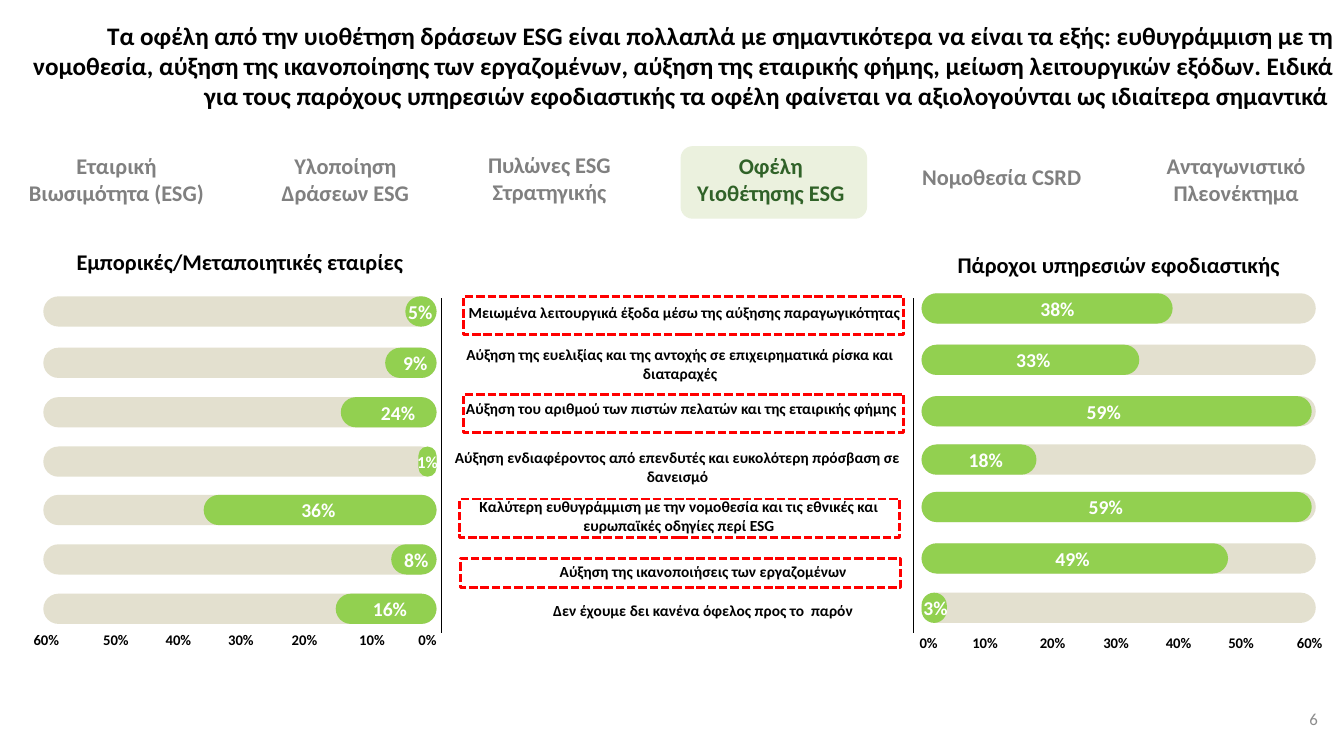
from pptx import Presentation
from pptx.dml.color import RGBColor
from pptx.enum.dml import MSO_LINE
from pptx.enum.shapes import MSO_CONNECTOR, MSO_SHAPE
from pptx.enum.text import MSO_ANCHOR, PP_ALIGN
from pptx.oxml.ns import qn
from pptx.util import Inches, Pt
from lxml.etree import SubElement

BLACK = RGBColor(0x00, 0x00, 0x00)
WHITE = RGBColor(0xFF, 0xFF, 0xFF)
GRAY = RGBColor(0x80, 0x80, 0x80)
NUMBER_GRAY = RGBColor(0x8C, 0x8C, 0x8C)
TRACK = RGBColor(0xDD, 0xD9, 0xC3)
GREEN = RGBColor(0x92, 0xD0, 0x50)
DARK_GREEN = RGBColor(0x30, 0x62, 0x28)
PALE_GREEN = RGBColor(0xEB, 0xF1, 0xDE)
RED = RGBColor(0xFF, 0x00, 0x00)

# Tabs: text, left, top, width, height of the text box
TABS = [
    ("Εταιρική Βιωσιμότητα (ESG)", 0.13, 0.01, 2.05, 0.64),
    ("Υλοποίηση Δράσεων ESG", 2.5, 0.01, 1.85, 0.64),
    ("Πυλώνες ESG Στρατηγικής", 4.3, 0, 2.3, 0.64),
    ("Οφέλη Υιοθέτησης ESG", 6.72, 0.01, 1.85, 0.64),
    ("Νομοθεσία CSRD", 9.01, 0.12, 1.85, 0.37),
    ("Ανταγωνιστικό Πλεονέκτημα", 11.19, 0.01, 2.14, 0.64),
]
ACTIVE_TAB = 3

# Bars: value, middle of the row, bar length, left of the label
COMPANIES = [
    (5, 0.68, 0.31, 3.52), (9, 1.19, 0.51, 3.47), (24, 1.68, 0.95, 3.25),
    (1, 2.17, 0.18, 3.61), (36, 2.65, 2.31, 2.46), (8, 3.14, 0.45, 3.48),
    (16, 3.63, 1.0, 3.17),
]
PROVIDERS = [
    (38, 0.62, 2.49, 1.08), (33, 1.13, 2.16, 0.84), (59, 1.64, 3.87, 1.54),
    (18, 2.12, 1.14, 0.37), (59, 2.59, 3.87, 1.56), (49, 3.1, 3.04, 1.23),
    (3, 3.59, 0.25, -0.08),
]
COMPANY_TICKS = [3.81, 3.26, 2.59, 1.96, 1.34, 0.72, 0.03]
PROVIDER_TICKS = [0.07, 0.63, 1.3, 1.93, 2.55, 3.17, 3.85]

# Benefits: text, left, top, width
BENEFITS = [
    ("Μειωμένα λειτουργικά έξοδα μέσω της αύξησης παραγωγικότητας",
     0.05, -0.08, 4.72),
    ("Αύξηση της ευελιξίας και της αντοχής σε επιχειρηματικά ρίσκα και διαταραχές",
     0.02, 0.43, 4.69),
    ("Αύξηση του αριθμού των πιστών πελατών και της εταιρικής φήμης",
     0.02, 0.87, 4.72),
    ("Αύξηση ενδιαφέροντος από επενδυτές και ευκολότερη πρόσβαση σε δανεισμό",
     0.02, 1.45, 4.64),
    ("Καλύτερη ευθυγράμμιση με την νομοθεσία και τις εθνικές και ευρωπαϊκές οδηγίες περί ESG",
     0.03, 1.94, 4.65),
    ("Αύξηση της ικανοποιήσεις των εργαζομένων", 0.25, 2.49, 4.69),
    ("Δεν έχουμε δει κανένα όφελος προς το  παρόν", 0.25, 2.88, 4.69),
]
# Frames: left, top, height
FRAMES = [(0.22, -0.02, 0.38), (0.22, 0.95, 0.38), (0.18, 1.99, 0.38), (0.19, 2.58, 0.29)]


def add_text(s, text, x, y, w, h, size=16, color=BLACK, bold=True,
             align=PP_ALIGN.CENTER, anchor=MSO_ANCHOR.TOP, spacing=None):
    tf = s.shapes.add_textbox(Inches(x), Inches(y), Inches(w), Inches(h)).text_frame
    tf.word_wrap = True
    tf.vertical_anchor = anchor
    p = tf.paragraphs[0]
    p.alignment = align
    if spacing:
        p.line_spacing = spacing
    r = p.add_run()
    r.text = text
    r.font.name = "Calibri"
    r.font.size = Pt(size)
    r.font.bold = bold
    r.font.color.rgb = color


def add_box(s, kind, x, y, w, h, fill=None, rounding=None, alpha=None):
    sp = s.shapes.add_shape(kind, Inches(x), Inches(y), Inches(w), Inches(h))
    sp.shadow.inherit = False
    sp.line.fill.background()
    if fill is None:
        sp.fill.background()
    else:
        sp.fill.solid()
        sp.fill.fore_color.rgb = fill
    if rounding is not None:
        sp.adjustments[0] = rounding
    if alpha:
        clr = sp.fill._xPr.find(qn("a:solidFill"))[0]
        SubElement(clr, qn("a:alpha")).set("val", str(alpha * 1000))
    return sp


def add_tabs(s, x, y):
    add_box(s, MSO_SHAPE.ROUNDED_RECTANGLE, x + 6.75, y, 1.85, 0.72, PALE_GREEN)
    for i, (text, left, top, w, h) in enumerate(TABS):
        add_text(s, text, x + left, y + top, w, h,
                 color=DARK_GREEN if i == ACTIVE_TAB else GRAY)


def add_bar_panel(s, x, y, w, heading, rows, ticks, from_right=False):
    bar_h = 0.3
    add_text(s, heading, x, y, w, 0.37)
    for value, middle, length, label_x in rows:
        top = y + middle - bar_h / 2
        start = x + w - length if from_right else x
        add_box(s, MSO_SHAPE.ROUNDED_RECTANGLE, x, top, w, bar_h, TRACK, 0.5, alpha=80)
        add_box(s, MSO_SHAPE.ROUNDED_RECTANGLE, start, top, length, bar_h, GREEN, 0.5)
        add_text(s, f"{value}%", x + label_x, y + middle - 0.17, 0.6, 0.34,
                 size=12 if value == 1 else 14, color=WHITE,
                 align=PP_ALIGN.LEFT, anchor=MSO_ANCHOR.MIDDLE)
    # Axis labels
    for i, center in enumerate(ticks):
        add_text(s, f"{10 * i}%", x + center - 0.38, y + 3.81, 0.76, 0.28,
                 size=10.5, spacing=0.95)


def add_benefits(s, x, y, w, h):
    # Dividers on both sides
    for line_x in (x, x + w):
        line = s.shapes.add_connector(MSO_CONNECTOR.STRAIGHT, Inches(line_x), Inches(y),
                                      Inches(line_x), Inches(y + h))
        line.line.color.rgb = BLACK
        line.line.width = Pt(1)
        SubElement(line._element.spPr, qn("a:effectLst"))
    for text, left, top, width in BENEFITS:
        add_text(s, text, x + left, y + top, width, 0.44, size=11,
                 anchor=MSO_ANCHOR.MIDDLE)
    # Frames around the main benefits
    for left, top, height in FRAMES:
        sp = add_box(s, MSO_SHAPE.RECTANGLE, x + left, y + top, 4.36, height)
        sp.line.color.rgb = RED
        sp.line.width = Pt(2)
        sp.line.dash_style = MSO_LINE.SQUARE_DOT


def main():
    prs = Presentation()
    prs.slide_width, prs.slide_height = Inches(13.33), Inches(7.5)
    s = prs.slides.add_slide(prs.slide_layouts[6])

    # Title
    add_text(s, "Τα οφέλη από την υιοθέτηση δράσεων ESG είναι πολλαπλά με σημαντικότερα "
             "να είναι τα εξής: ευθυγράμμιση με τη νομοθεσία, αύξηση της ικανοποίησης των "
             "εργαζομένων, αύξηση της εταιρικής φήμης, μείωση λειτουργικών εξόδων. Ειδικά "
             "για τους παρόχους υπηρεσιών εφοδιαστικής τα οφέλη φαίνεται να αξιολογούνται "
             "ως ιδιαίτερα σημαντικά ", 0, 0.15, 13.33, 1.01, size=18, align=PP_ALIGN.RIGHT)
    add_tabs(s, 0, 1.45)
    add_bar_panel(s, 0.43, 2.41, 3.9, "Εμπορικές/Μεταποιητικές εταιρίες",
                  COMPANIES, COMPANY_TICKS, from_right=True)
    add_bar_panel(s, 9.14, 2.44, 3.91, "Πάροχοι υπηρεσιών εφοδιαστικής",
                  PROVIDERS, PROVIDER_TICKS)
    add_benefits(s, 4.38, 2.96, 4.68, 3.32)

    # Slide number
    add_text(s, "6", 10.84, 6.93, 2.33, 0.4, size=12, color=NUMBER_GRAY, bold=False,
             align=PP_ALIGN.RIGHT, anchor=MSO_ANCHOR.MIDDLE)
    prs.save("out.pptx")


if __name__ == "__main__":
    main()
